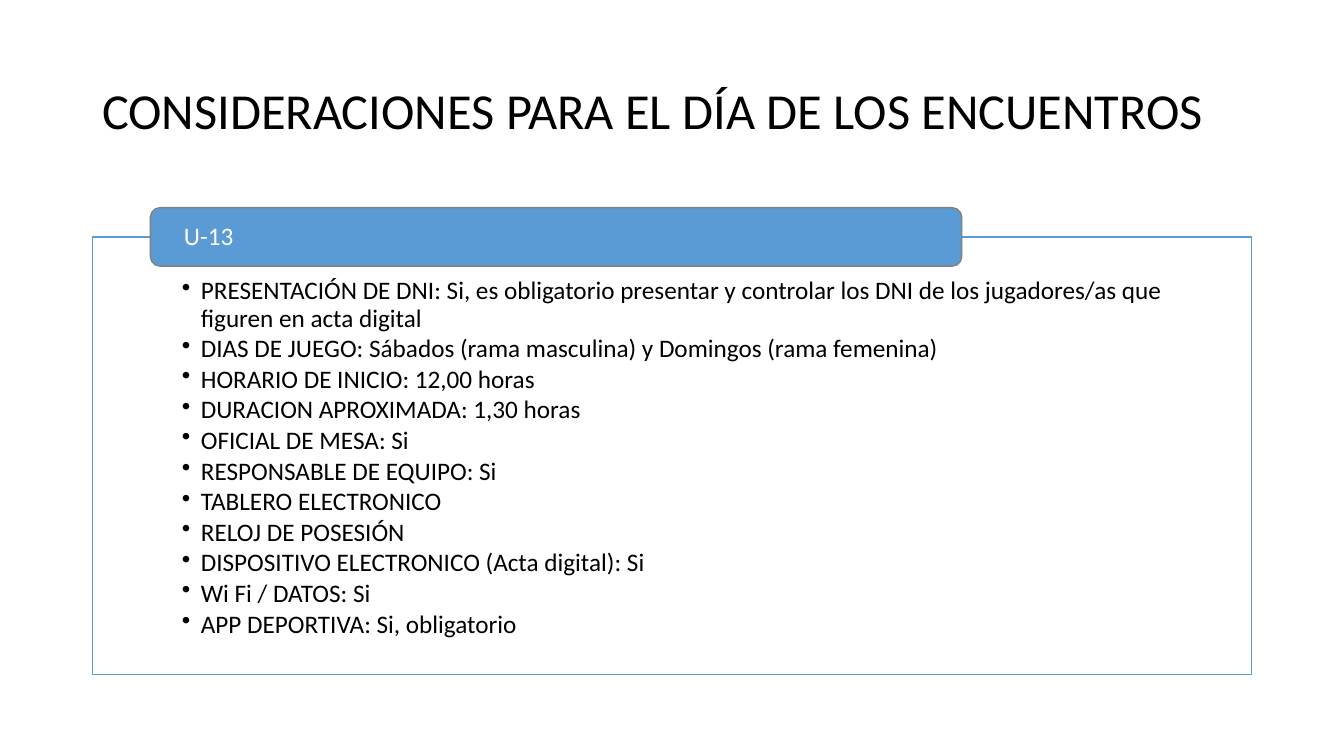
import pptx
import pptx.dml.color
import pptx.enum.shapes
import pptx.enum.text
import pptx.oxml.ns
import pptx.util
from dataclasses import dataclass
from lxml import etree

Pt = pptx.util.Pt


@dataclass(frozen=True)
class Theme:
    """Colours, font and type sizes of the slide."""
    font: str = "Calibri"
    ink: str = "000000"
    paper: str = "FFFFFF"
    accent: str = "5B9BD5"
    tab_edge: str = "808080"
    title_size: int = 36
    body_size: int = 18


THEME = Theme()
CONSIDERATIONS = [
    "PRESENTACIÓN DE DNI: Si, es obligatorio presentar y controlar los DNI de los "
    "jugadores/as que figuren en acta digital",
    "DIAS DE JUEGO: Sábados (rama masculina) y Domingos (rama femenina)",
    "HORARIO DE INICIO: 12,00 horas",
    "DURACION APROXIMADA: 1,30 horas",
    "OFICIAL DE MESA: Si",
    "RESPONSABLE DE EQUIPO: Si",
    "TABLERO ELECTRONICO",
    "RELOJ DE POSESIÓN",
    "DISPOSITIVO ELECTRONICO (Acta digital): Si",
    "Wi Fi / DATOS: Si",
    "APP DEPORTIVA: Si, obligatorio",
]


def rgb(code):
    """Return the colour for a hex code."""
    return pptx.dml.color.RGBColor.from_string(code)


def write(frame, text, size, color, insets, anchor, space_after=0):
    """Fill a text frame with left-aligned paragraphs in one style."""
    frame.word_wrap = True
    frame.vertical_anchor = anchor
    (frame.margin_left, frame.margin_top,
     frame.margin_right, frame.margin_bottom) = map(Pt, insets)
    frame.text = text
    for paragraph in frame.paragraphs:
        paragraph.alignment = pptx.enum.text.PP_ALIGN.LEFT
        paragraph.line_spacing = 0.9
        paragraph.space_after = Pt(space_after)
        for run in paragraph.runs:
            run.font.name = THEME.font
            run.font.size = Pt(size)
            run.font.color.rgb = rgb(color)


def add_bullet(paragraph, indent):
    """Give a paragraph a hanging round bullet."""
    properties = paragraph._p.get_or_add_pPr()
    properties.set("marL", str(Pt(indent)))
    properties.set("indent", str(-Pt(indent)))
    bullet = etree.SubElement(properties, pptx.oxml.ns.qn("a:buChar"))
    bullet.set("char", "•")


def add_block(slide, kind, box, fill, edge):
    """Add a filled, outlined shape without shadow."""
    block = slide.shapes.add_shape(kind, *map(Pt, box))
    block.shadow.inherit = False
    block.fill.solid()
    block.fill.fore_color.rgb = rgb(fill)
    block.line.color.rgb = rgb(edge)
    block.line.width = Pt(1)
    return block


def add_title(slide, box, text):
    """Add the heading, centred vertically in its box."""
    title = slide.shapes.add_textbox(*map(Pt, box))
    write(title.text_frame, text, THEME.title_size, THEME.ink,
          (7.2, 3.6, 7.2, 3.6), pptx.enum.text.MSO_ANCHOR.MIDDLE)


def add_category(slide, box, name, considerations):
    """Add a framed list with a name tab straddling its top edge."""
    left, top, width, height = box
    shapes = pptx.enum.shapes.MSO_SHAPE
    anchors = pptx.enum.text.MSO_ANCHOR
    panel = add_block(slide, shapes.RECTANGLE, box, THEME.paper, THEME.accent)
    write(panel.text_frame, "\n".join(considerations), THEME.body_size, THEME.ink,
          (64, 29.5, 64, 10), anchors.TOP, space_after=2.4)
    for paragraph in panel.text_frame.paragraphs:
        add_bullet(paragraph, 13.5)
    tab_height = 41.8
    tab_box = (left + 0.05 * width, top - tab_height / 2, 0.7 * width, tab_height)
    tab = add_block(slide, shapes.ROUNDED_RECTANGLE, tab_box, THEME.accent, THEME.tab_edge)
    write(tab.text_frame, name, THEME.body_size, THEME.paper,
          (21.9, 0, 21.9, 0), anchors.MIDDLE)


def main():
    """Build the slide and save it."""
    deck = pptx.Presentation()
    deck.slide_width, deck.slide_height = Pt(960), Pt(540)
    slide = deck.slides.add_slide(deck.slide_layouts[6])
    add_title(slide, (66, 28.8, 828, 104.4), "CONSIDERACIONES PARA EL DÍA DE LOS ENCUENTROS")
    add_category(slide, (66, 169.2, 828, 312.5), "U-13", CONSIDERATIONS)
    deck.save("out.pptx")


if __name__ == "__main__":
    main()
